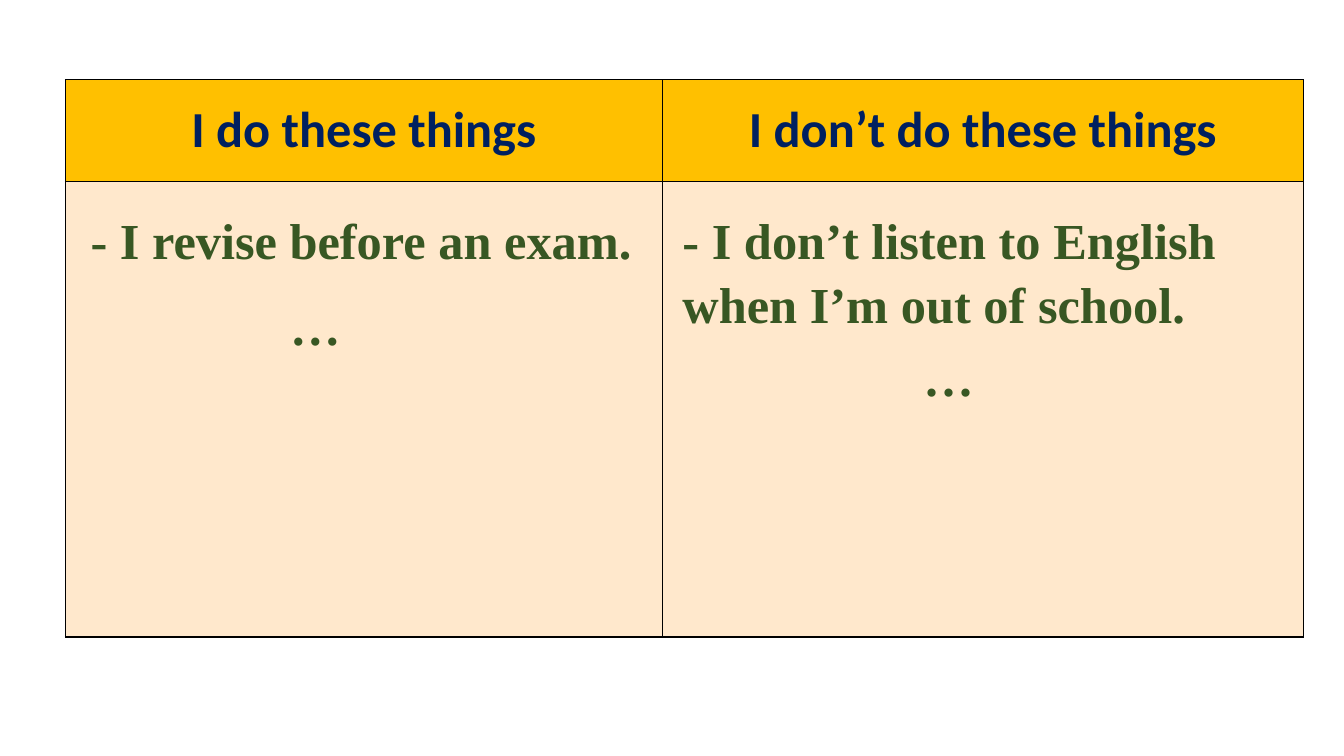
import pptx
import pptx.util
import pptx.dml.color
import pptx.enum.text
import pptx.oxml
import pptx.oxml.ns
from lxml import etree

Inches = pptx.util.Inches
Pt = pptx.util.Pt
RGB = pptx.dml.color.RGBColor
Align = pptx.enum.text.PP_ALIGN
Anchor = pptx.enum.text.MSO_ANCHOR

GOLD = RGB(0xFF, 0xC0, 0x00)
CREAM = RGB(0xFF, 0xE8, 0xCC)
NAVY = RGB(0x00, 0x20, 0x60)
GREEN = RGB(0x38, 0x57, 0x23)
BLACK = RGB(0x00, 0x00, 0x00)

HEADS = ["I do these things", "I don’t do these things"]
COLS = [5.92, 6.36]
ROWS = [1.01, 4.52]
NOTES = [
    ("- I revise before an exam.", 0.8, 2, 6.67, 0.71),
    ("- I don’t listen to English when I’m out of school.", 6.67, 2, 6.02, 1.31),
    ("…", 2.78, 2.85, 1.43, 0.71),
    ("…", 9.06, 3.35, 1.43, 0.71),
]


def add_run(para, text, font, color):
    run = para.add_run()
    run.text = text
    run.font.name = font
    run.font.size = Pt(36)
    run.font.bold = True
    run.font.color.rgb = color


def add_edges(cell):
    props = cell._tc.get_or_add_tcPr()
    for i, side in enumerate(["lnL", "lnR", "lnT", "lnB"]):
        line = etree.Element(pptx.oxml.ns.qn("a:" + side), w=str(Pt(1)))
        fill = etree.SubElement(line, pptx.oxml.ns.qn("a:solidFill"))
        etree.SubElement(fill, pptx.oxml.ns.qn("a:srgbClr"), val=str(BLACK))
        props.insert(i, line)


def add_grid(slide):
    frame = slide.shapes.add_table(
        len(ROWS), len(COLS), Inches(0.65), Inches(0.79),
        Inches(sum(COLS)), Inches(sum(ROWS)))
    table = frame.table
    for col, width in zip(table.columns, COLS):
        col.width = Inches(width)
    for row, height, color in zip(table.rows, ROWS, [GOLD, CREAM]):
        row.height = Inches(height)
        for cell in row.cells:
            cell.fill.solid()
            cell.fill.fore_color.rgb = color
            add_edges(cell)
    for cell, text in zip(table.rows[0].cells, HEADS):
        cell.vertical_anchor = Anchor.MIDDLE
        para = cell.text_frame.paragraphs[0]
        para.alignment = Align.CENTER
        add_run(para, text, "Calibri", NAVY)


def add_note(slide, text, *place):
    box = slide.shapes.add_textbox(*map(Inches, place))
    frame = box.text_frame
    frame.word_wrap = True
    frame.auto_size = pptx.enum.text.MSO_AUTO_SIZE.SHAPE_TO_FIT_TEXT
    para = frame.paragraphs[0]
    para.line_spacing = 1.05
    add_run(para, text, "Times New Roman", GREEN)


def main():
    deck = pptx.Presentation()
    deck.slide_width = Inches(13.33)
    deck.slide_height = Inches(7.5)
    slide = deck.slides.add_slide(deck.slide_layouts[6])
    add_grid(slide)
    for note in NOTES:
        add_note(slide, *note)
    deck.save("out.pptx")


if __name__ == "__main__":
    main()
